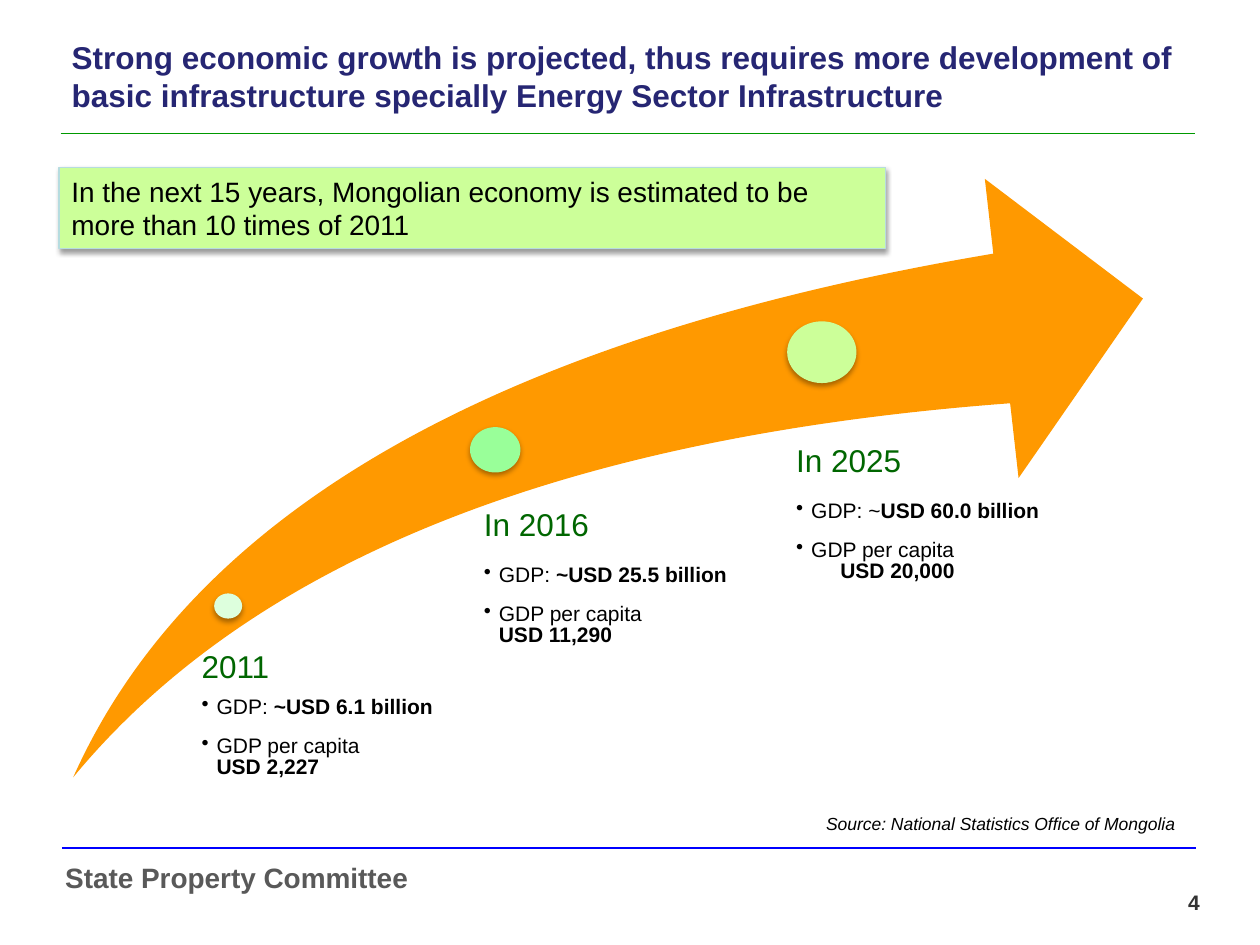
from lxml.etree import SubElement
from pptx import Presentation
from pptx.dml.color import RGBColor
from pptx.enum.shapes import MSO_CONNECTOR, MSO_SHAPE
from pptx.enum.text import MSO_ANCHOR, MSO_AUTO_SIZE, PP_ALIGN
from pptx.oxml.ns import qn
from pptx.util import Pt

# Content
TITLE = ("Strong economic growth is projected, thus requires more development of "
         "basic infrastructure specially Energy Sector Infrastructure")
CALLOUT = ("In the next 15 years, Mongolian economy is estimated to be "
           "more than 10 times of 2011")
# Captions: text, (left, top, width, height), size, colour, bold, italic, alignment
CAPTIONS = [
    ("State Property Committee", (30.2, 488.2, 390, 26.6), 16, "595959", True, False, PP_ALIGN.LEFT),
    ("Source: National Statistics Office of Mongolia", (433.4, 460.8, 245, 19.4), 10, "000000",
     False, True, PP_ALIGN.RIGHT),
    ("4", (662.4, 504.7, 30.2, 35), 12, "333333", True, False, PP_ALIGN.RIGHT),
]
# Rules: left, top, width, colour
RULES = [(34.6, 76.3, 648, "009900"), (35.3, 484.6, 648, "0000FF")]
MILESTONES = [
    {"heading": "2011", "gdp": ("GDP: ", "~USD 6.1 billion"), "capita": "USD 2,227",
     "box": (115.2, 372.2, 150, 78), "first_gap": 7.2, "value_indent": 8.6,
     "dot": (122.4, 339.1, 16, 14.4), "dot_colour": "DDFFDD"},
    {"heading": "In 2016", "gdp": ("GDP: ", "~USD 25.5 billion"), "capita": "USD 11,290",
     "box": (276.5, 290.9, 207, 145), "first_gap": 13.2, "value_indent": 8.6,
     "dot": (268.6, 244.1, 28.8, 25.9), "dot_colour": "99FF99"},
    {"heading": "In 2025", "gdp": ("GDP: ~", "USD 60.0 billion"), "capita": "USD 20,000",
     "box": (455, 254.2, 175, 212), "first_gap": 13.2, "value_indent": 25.2,
     "dot": (449.8, 183.6, 39.6, 35.3), "dot_colour": "CCFF99"},
]
BULLET_INDENT, ITEM_GAP = 8.6, 10.2


def colour(value):
    return RGBColor.from_string(value)


def points(*values):
    return [Pt(value) for value in values]


def style(font, size, shade, bold=None, italic=None):
    font.name, font.size = "Arial", Pt(size)
    font.color.rgb = colour(shade)
    font.bold, font.italic = bold, italic


def add_figure(kind, place, fill, line=None, shadow=None):
    figure = page.shapes.add_shape(kind, *points(*place))
    figure.fill.solid()
    figure.fill.fore_color.rgb = colour(fill)
    if line:
        figure.line.color.rgb = colour(line)
        figure.line.width = Pt(0.75)
    else:
        figure.line.fill.background()
    figure.shadow.inherit = False
    if shadow:
        opacity, blur, distance = shadow
        effects = figure._element.spPr.find(qn("a:effectLst"))
        outer = SubElement(effects, qn("a:outerShdw"), blurRad=str(int(Pt(blur))),
                           dist=str(int(Pt(distance))), dir="5400000", rotWithShape="0")
        black = SubElement(outer, qn("a:srgbClr"), val="000000")
        SubElement(black, qn("a:alpha"), val=str(opacity * 1000))
    return figure


def add_text_box(place):
    frame = page.shapes.add_textbox(*points(*place)).text_frame
    frame.word_wrap = True
    return frame


def add_item(frame, spans, gap, indent=BULLET_INDENT, bullet=True):
    """Add a 12-point paragraph; spans are (text, bold) pairs."""
    para = frame.add_paragraph()
    para.line_spacing, para.space_before = Pt(12), Pt(gap)
    properties = para._p.get_or_add_pPr()
    properties.set("marL", str(int(Pt(indent))))
    if bullet:
        properties.set("indent", str(-int(Pt(indent))))
        SubElement(properties, qn("a:buChar"), char="•")
    style(para.font, 12, "000000")
    for text, bold in spans:
        span = para.add_run()
        span.text, span.font.bold = text, bold


deck = Presentation()
deck.slide_width, deck.slide_height = points(720, 540)
page = deck.slides.add_slide(deck.slide_layouts[5])

# Title
title = page.shapes.title
title.left, title.top, title.width, title.height = points(33.8, 18, 686.2, 77.8)
title.text_frame.text = TITLE
title.text_frame.word_wrap = True
title.text_frame.auto_size = MSO_AUTO_SIZE.NONE
title.text_frame.vertical_anchor = MSO_ANCHOR.TOP
title.text_frame.paragraphs[0].alignment = PP_ALIGN.LEFT
style(title.text_frame.paragraphs[0].font, 18, "262673", bold=True)

# Rules
for left, top, width, shade in RULES:
    rule = page.shapes.add_connector(MSO_CONNECTOR.STRAIGHT, *points(left, top, left + width, top))
    rule.line.color.rgb = colour(shade)
    rule.line.width = Pt(1)
    SubElement(rule._element.spPr, qn("a:effectLst"))

# Footer, source and page number
for text, place, size, shade, bold, italic, alignment in CAPTIONS:
    para = add_text_box(place).paragraphs[0]
    para.text, para.alignment = text, alignment
    style(para.font, size, shade, bold, italic)

# Growth arrow
arrow = add_figure(MSO_SHAPE.SWOOSH_ARROW, (41.8, 102.2, 611.3, 342), "FF9900")
arrow.adjustments[0] = arrow.adjustments[1] = 0.25

# Milestones
for milestone in MILESTONES:
    add_figure(MSO_SHAPE.OVAL, milestone["dot"], milestone["dot_colour"], shadow=(35, 3.1, 1.8))
    frame = add_text_box(milestone["box"])
    frame.margin_left = frame.margin_top = frame.margin_right = frame.margin_bottom = 0
    heading = frame.paragraphs[0]
    heading.text, heading.line_spacing = milestone["heading"], 0.9
    style(heading.font, 18, "006600")
    label, amount = milestone["gdp"]
    add_item(frame, [(label, False), (amount, True)], milestone["first_gap"])
    add_item(frame, [("GDP per capita", False)], ITEM_GAP)
    add_item(frame, [(milestone["capita"], True)], 0, milestone["value_indent"], bullet=False)

# Callout
callout = add_figure(MSO_SHAPE.RECTANGLE, (33.8, 95.8, 472.3, 46.1), "CCFF99", "B6DCDF", (38, 3.1, 1.6))
callout.text_frame.word_wrap = True
callout.text_frame.vertical_anchor = MSO_ANCHOR.MIDDLE
para = callout.text_frame.paragraphs[0]
para.text, para.alignment = CALLOUT, PP_ALIGN.LEFT
style(para.font, 16, "000000")

deck.save("out.pptx")
